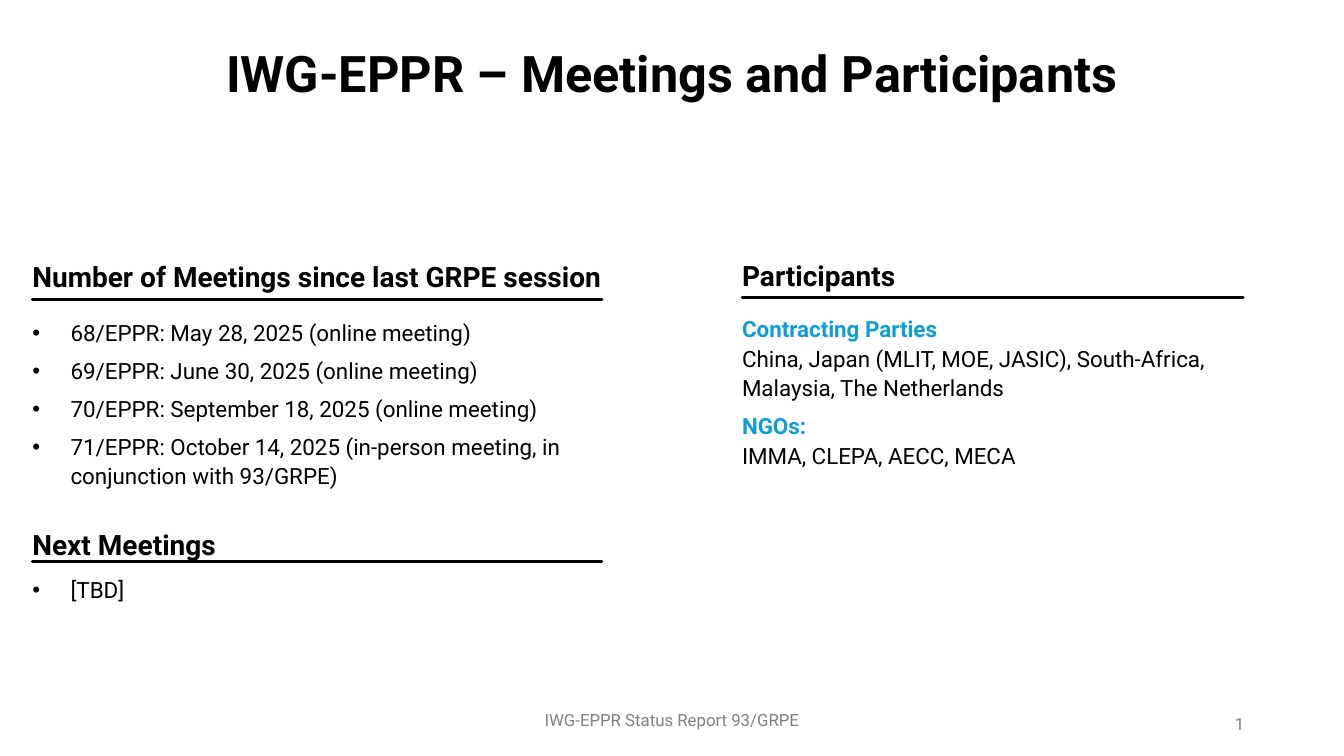
import pptx
import pptx.util
import pptx.dml.color
import pptx.enum.shapes
import pptx.enum.text
from lxml import etree
from pptx.oxml.ns import qn

Inches = pptx.util.Inches
Pt = pptx.util.Pt
ALIGN = pptx.enum.text.PP_ALIGN
ANCHOR = pptx.enum.text.MSO_ANCHOR

FONT = "Roboto"
BLACK, BLUE, GREY = "000000", "0F9ED5", "808080"
TITLE = "IWG-EPPR – Meetings and Participants"
FOOTER = "IWG-EPPR Status Report 93/GRPE"
PAGE_NUMBER = "2"

HEADINGS = [
    ("Number of Meetings since last GRPE session", 0.32, 2.53, 5.65, 2.97),
    ("Participants", 7.36, 2.52, 4.97, 2.95),
    ("Next Meetings", 0.32, 5.19, 5.65, 5.57),
]
BULLET_LISTS = [
    (3.14, 1.75, [
        "68/EPPR: May 28, 2025 (online meeting)",
        "69/EPPR: June 30, 2025 (online meeting)",
        "70/EPPR: September 18, 2025 (online meeting)",
        "71/EPPR: October 14, 2025 (in-person meeting, in conjunction with 93/GRPE)",
    ]),
    (5.69, 0.4, ["[TBD]"]),
]
PARTICIPANTS = [
    ("Contracting Parties",
     "China, Japan (MLIT, MOE, JASIC), South-Africa, Malaysia, The Netherlands"),
    ("NGOs:", "IMMA, CLEPA, AECC, MECA"),
]

BULLET_FORMAT = {"line_spacing": 1.1, "space_before": Pt(3), "space_after": Pt(3)}
GROUP_FORMAT = {"line_spacing": 1.1, "space_before": Pt(6)}
FLUSH = {"margin_left": 0, "margin_top": 0, "margin_right": 0, "margin_bottom": 0}
HEADING_FRAME = {**FLUSH, "margin_top": Inches(0.04)}


def apply(target, values):
    for name, value in values.items():
        setattr(target, name, value)


def color(value):
    return pptx.dml.color.RGBColor.from_string(value)


def add_span(para, text, size, shade=BLACK, bold=False):
    span = para.add_run()
    span.text = text
    apply(span.font, {"name": FONT, "size": Pt(size), "bold": bold})
    span.font.color.rgb = color(shade)
    return span


def add_box(page, left, top, width, height, values):
    box = page.shapes.add_textbox(*map(Inches, (left, top, width, height)))
    apply(box.text_frame, {"word_wrap": True, **values})
    return box.text_frame


def add_paras(frame, count, values):
    paras = [frame.paragraphs[0]] + [frame.add_paragraph() for _ in range(count - 1)]
    for para in paras:
        apply(para, values)
    return paras


def add_bullet(para):
    properties = para._p.get_or_add_pPr()
    properties.set("marL", str(Inches(0.38)))
    properties.set("indent", str(-Inches(0.38)))
    etree.SubElement(properties, qn("a:buFont")).set("typeface", "Arial")
    etree.SubElement(properties, qn("a:buChar")).set("char", "•")


def add_rule(page, left, top, width):
    rule = page.shapes.add_connector(
        pptx.enum.shapes.MSO_CONNECTOR.STRAIGHT,
        *map(Inches, (left, top, left + width, top)))
    rule.line.width = Pt(2)
    rule.line.color.rgb = color(BLACK)
    rule.line._get_or_add_ln().set("cap", "rnd")
    etree.SubElement(rule._element.spPr, qn("a:effectLst"))


def make_page_field(span):
    field = span._r
    field.tag = qn("a:fld")
    field.set("id", "{B6F15528-21DE-4FAA-801E-634DDDAF4B2B}")
    field.set("type", "slidenum")


def main():
    deck = pptx.Presentation()
    apply(deck, {"slide_width": Inches(13.33), "slide_height": Inches(7.5)})
    page = deck.slides.add_slide(deck.slide_layouts[5])

    title = page.shapes.title
    apply(title, {"left": 0, "top": 0, "width": Inches(13.33), "height": Inches(1.52)})
    title.text_frame.vertical_anchor = ANCHOR.MIDDLE
    para = title.text_frame.paragraphs[0]
    apply(para, {"alignment": ALIGN.CENTER, "line_spacing": 0.9})
    add_span(para, TITLE, 36, bold=True)

    for text, left, top, width, rule_top in HEADINGS:
        frame = add_box(page, left, top, width + 0.2, 0.38, HEADING_FRAME)
        add_span(frame.paragraphs[0], text, 20, bold=True)
        add_rule(page, left, rule_top, width)

    for top, height, items in BULLET_LISTS:
        frame = add_box(page, 0.32, top, 5.55, height, FLUSH)
        for para, text in zip(add_paras(frame, len(items), BULLET_FORMAT), items):
            add_bullet(para)
            add_span(para, text, 16)

    frame = add_box(page, 7.36, 3.1, 4.97, 1.55, FLUSH)
    paras = add_paras(frame, len(PARTICIPANTS), GROUP_FORMAT)
    for para, (label, members) in zip(paras, PARTICIPANTS):
        add_span(para, label, 16, BLUE, True)
        para.add_line_break()
        add_span(para, members, 16)

    frame = add_box(page, 0, 6.99, 13.33, 0.51, {})
    frame.paragraphs[0].alignment = ALIGN.CENTER
    add_span(frame.paragraphs[0], FOOTER, 12, GREY)

    frame = add_box(page, 9.44, 7.05, 3, 0.28, {"vertical_anchor": ANCHOR.BOTTOM})
    apply(frame.paragraphs[0], {"alignment": ALIGN.RIGHT, "line_spacing": 0.9})
    make_page_field(add_span(frame.paragraphs[0], PAGE_NUMBER, 12, GREY))

    deck.save("out.pptx")


if __name__ == "__main__":
    main()
